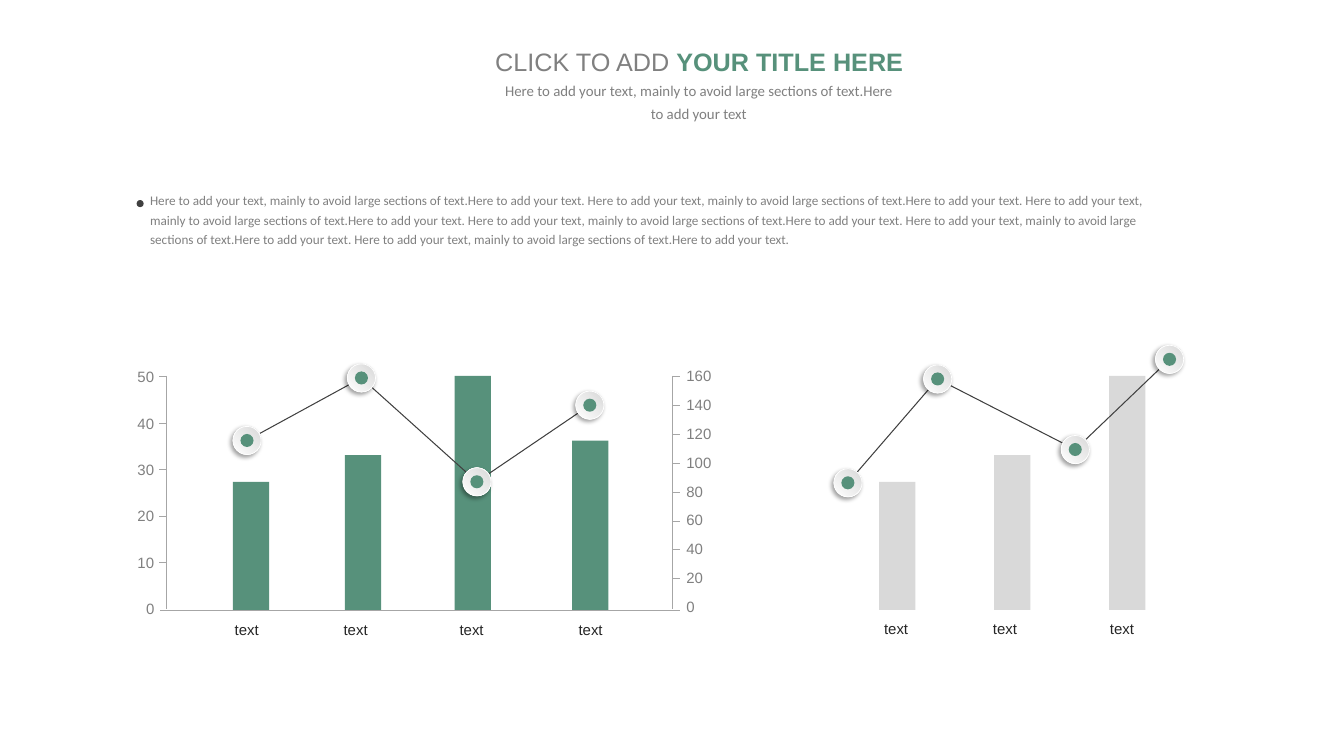
from lxml.etree import SubElement
from pptx import Presentation
from pptx.dml.color import RGBColor
from pptx.enum.shapes import MSO_CONNECTOR, MSO_SHAPE
from pptx.enum.text import MSO_AUTO_SIZE, PP_ALIGN
from pptx.oxml.ns import qn
from pptx.util import Inches, Pt

HUES = {"green": "57917B", "gray": "808080", "rule": "A6A6A6", "pale": "D9D9D9",
        "dark": "404040", "ink": "262626", "white": "FFFFFF", "black": "000000"}
HEAD = {"name": "Arial", "size": Pt(18)}
BOLD = HEAD | {"bold": True}
LABEL = {"name": "Arial", "size": Pt(10.7)}
LEAD = {"name": "Calibri", "size": Pt(10.6)}
BODY = {"name": "Calibri", "size": Pt(9.4)}
SHADE = {"blurRad": Pt(3), "dist": Pt(2), "dir": 135 * 60000, "algn": "tr", "rotWithShape": 0}


class Board:
    """Draw on one slide with a grid of tenth-inch columns and rows."""

    def __init__(self, slide):
        self.shapes = slide.shapes

    def cells(self, *spans):
        return [Inches(span / 10) for span in spans]

    def hue(self, name):
        return RGBColor.from_string(HUES[name])

    def block(self, kind, box, hue):
        shape = self.shapes.add_shape(kind, *self.cells(*box))
        shape.shadow.inherit = False
        shape.fill.solid()
        shape.fill.fore_color.rgb = self.hue(hue)
        shape.line.fill.background()
        return shape

    def bar(self, col, rows, hue):
        self.block(MSO_SHAPE.RECTANGLE, (col, 60.5 - rows, 3.6, rows), hue)

    def dot(self, col, row, size, hue):
        box = (col - size / 2, row - size / 2, size, size)
        return self.block(MSO_SHAPE.OVAL, box, hue)

    def mark(self, col, row):
        ring = self.dot(col, row, 2.8, "white")
        ring.fill.gradient()
        ring.fill.gradient_angle = 45
        for stop, hue, place in zip(ring.fill.gradient_stops, ("white", "pale"), (0, 1)):
            stop.color.rgb = self.hue(hue)
            stop.position = place
        self.pen(ring, "white", 0.5)
        glow = ring._element.spPr.find(qn("a:effectLst"))
        shade = SubElement(glow, qn("a:outerShdw"), {key: str(val) for key, val in SHADE.items()})
        tint = SubElement(shade, qn("a:srgbClr"), val=HUES["black"])
        SubElement(tint, qn("a:alpha"), val="37000")
        self.dot(col, row, 1.3, "green")

    def pen(self, shape, hue, width=0.75):
        shape.line.color.rgb = self.hue(hue)
        shape.line.width = Pt(width)

    def rule(self, *ends):
        line = self.shapes.add_connector(MSO_CONNECTOR.STRAIGHT, *self.cells(*ends))
        self.pen(line, "rule")
        SubElement(line._element.spPr, qn("a:effectLst"))

    def trend(self, points):
        spots = [self.cells(*point) for point in points]
        draft = self.shapes.build_freeform(*spots[0])
        draft.add_line_segments(spots[1:], close=False)
        line = draft.convert_to_shape()
        line.shadow.inherit = False
        line.fill.background()
        self.pen(line, "dark")
        for point in points:
            self.mark(*point)

    def text(self, box, runs, wrap=False, align=PP_ALIGN.LEFT, space=None):
        frame = self.shapes.add_textbox(*self.cells(*box)).text_frame
        para = frame.paragraphs[0]
        for part, looks in ((frame, {"word_wrap": wrap, "auto_size": MSO_AUTO_SIZE.SHAPE_TO_FIT_TEXT}),
                            (para, {"alignment": align, "line_spacing": space})):
            for key, val in looks.items():
                setattr(part, key, val)
        for words, style, hue in runs:
            run = para.add_run()
            run.text = words
            run.font.color.rgb = self.hue(hue)
            for key, val in style.items():
                setattr(run.font, key, val)

    def scale(self, col, tick, top, step, marks, left):
        self.rule(col, 37.3, col, 60.4)
        for i, mark in enumerate(marks):
            if mark:
                self.rule(tick, 37.4 + step * i, tick + 0.7, 37.4 + step * i)
            wide = 1.97 + 0.86 * len(str(mark))
            start = 16.34 - wide if left else 67.1
            self.text((start, top + step * i, wide, 2.8), [(str(mark), LABEL, "gray")])

    def names(self, cols, row):
        for col in cols:
            self.text((col, row, 4.4, 2.8), [("text", LABEL, "ink")])


def main():
    deck = Presentation()
    deck.slide_width, deck.slide_height = Inches(13.33), Inches(7.5)
    board = Board(deck.slides.add_slide(deck.slide_layouts[6]))

    for col, rows in zip((23.1, 34.2, 45.1, 56.75), (12.7, 15.35, 23.2, 16.8)):
        board.bar(col, rows, "green")
    short = "Here to add your text, mainly to avoid large sections of text.Here to add your text"
    board.text((13.9, 18.2, 103.5, 6.8), [(" ".join([short + "."] * 6), BODY, "gray")],
               wrap=True, space=Pt(14))
    board.dot(13.9, 20.2, 0.7, "dark")

    board.scale(16.5, 15.8, 36, 4.6, range(50, -1, -10), True)
    board.scale(66.7, 66.7, 35.9, 2.86, range(160, -1, -20), False)
    board.rule(15.9, 60.55, 67.4, 60.55)
    board.names((22.3, 33.1, 44.6, 56.4), 61.1)
    board.trend([(24.5, 43.7), (35.85, 37.5), (47.3, 47.8), (58.5, 40.2)])

    for i, rows in enumerate((12.7, 15.35, 23.2)):
        board.bar(87.2 + 11.4 * i, rows, "pale")
    board.names((86.7, 97.5, 109.1), 61)
    board.trend([(116, 35.65), (106.65, 44.6), (93, 37.6), (84.1, 47.9)])

    board.text((48.1, 4.1, 42.5, 4), [("CLICK TO ADD ", HEAD, "gray"),
               ("YOUR TITLE HERE", BOLD, "green")], align=PP_ALIGN.CENTER)
    board.text((48.8, 7.1, 41, 5.6), [(short, LEAD, "gray")],
               wrap=True, align=PP_ALIGN.CENTER, space=1.3)
    deck.save("out.pptx")


if __name__ == "__main__":
    main()
